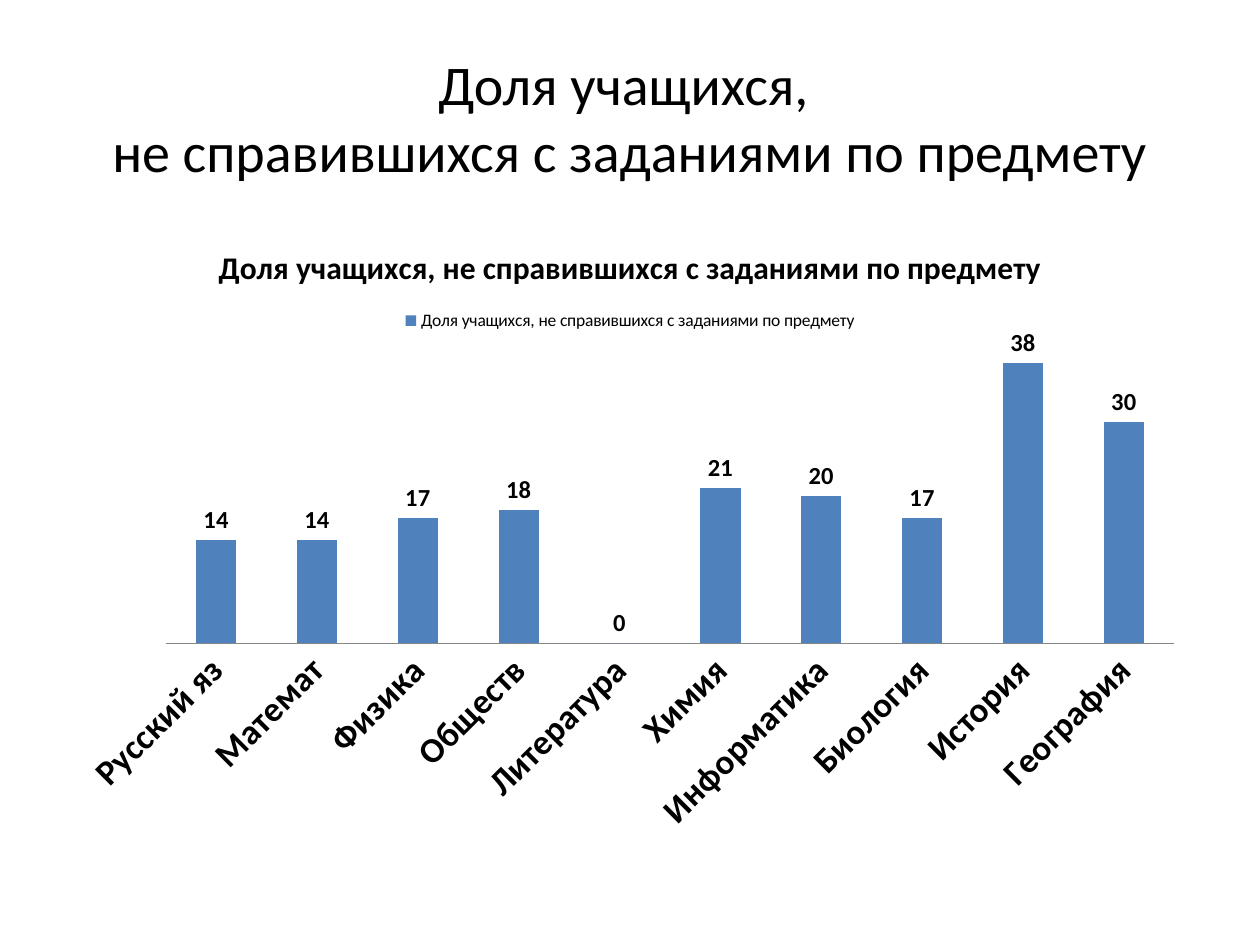
from pptx import Presentation
from pptx.chart.data import CategoryChartData as Data
from pptx.dml.color import RGBColor as Rgb
from pptx.enum.chart import XL_CHART_TYPE as Kind, XL_LABEL_POSITION as Spot
from pptx.enum.chart import XL_LEGEND_POSITION as Side, XL_TICK_MARK as Tick
from pptx.enum.text import MSO_ANCHOR as Anchor, PP_ALIGN as Align
from pptx.util import Pt

PX = 9144
FONT = "Calibri"
COLORS = {"text": "000000", "bar": "4F81BD", "axis": "868686"}
NAME = "Доля учащихся, не справившихся с заданиями по предмету"
SHARES = {
    "Русский яз": 14, "Математ": 14, "Физика": 17, "Обществ": 18,
    "Литература": 0, "Химия": 21, "Информатика": 20, "Биология": 17,
    "История": 38, "География": 30,
}


def tint(key):
    """Return the named colour."""
    return Rgb.from_string(COLORS[key])


def style(font, size, bold=False):
    """Set the face, size, weight and colour of a font."""
    font.name, font.size, font.bold = FONT, Pt(size), bold
    font.color.rgb = tint("text")


def write(frame, text, size=18, bold=False, align=Align.CENTER):
    """Write one paragraph into a text frame, with line breaks at newlines."""
    par = frame.paragraphs[0]
    par.alignment = align
    for row, line in enumerate(text.split("\n")):
        if row:
            par.add_line_break()
        run = par.add_run()
        run.text = line
        style(run.font, size, bold)


def add_title(slide, box):
    """Place the slide heading in the box."""
    frame = slide.shapes.add_textbox(*(n * PX for n in box)).text_frame
    frame.word_wrap = True
    frame.vertical_anchor = Anchor.MIDDLE
    write(frame, "Доля учащихся, \nне справившихся с заданиями по предмету", size=32)


def add_bars(slide, box):
    """Place the column chart of shares by subject in the box."""
    data = Data()
    data.categories = list(SHARES)
    data.add_series(NAME, list(SHARES.values()))
    chart = slide.shapes.add_chart(
        Kind.COLUMN_CLUSTERED, *(n * PX for n in box), data).chart
    style(chart.font, 10)

    chart.has_title = True
    write(chart.chart_title.text_frame, NAME, size=18, bold=True)
    chart.chart_title.include_in_layout = False
    chart.has_legend = True
    chart.legend.position = Side.TOP
    chart.legend.include_in_layout = False

    chart.value_axis.has_major_gridlines = False
    chart.value_axis.visible = False
    axis = chart.category_axis
    axis.major_tick_mark = axis.minor_tick_mark = Tick.NONE
    axis.format.line.color.rgb = tint("axis")
    style(axis.tick_labels.font, 20, bold=True)

    plot = chart.plots[0]
    plot.gap_width, plot.overlap = 150, -25
    plot.vary_by_categories = False
    bars = plot.series[0]
    bars.format.fill.solid()
    bars.format.fill.fore_color.rgb = tint("bar")
    labels = bars.data_labels
    labels.show_value = True
    labels.position = Spot.OUTSIDE_END
    style(labels.font, 14, bold=True)


def main():
    """Build the slide and save it."""
    deck = Presentation()
    deck.slide_width, deck.slide_height = 1000 * PX, 750 * PX
    slide = deck.slides.add_slide(deck.slide_layouts[6])
    add_title(slide, (50, 30, 900, 125))
    add_bars(slide, (50, 175, 900, 495))
    deck.save("out.pptx")


if __name__ == "__main__":
    main()
